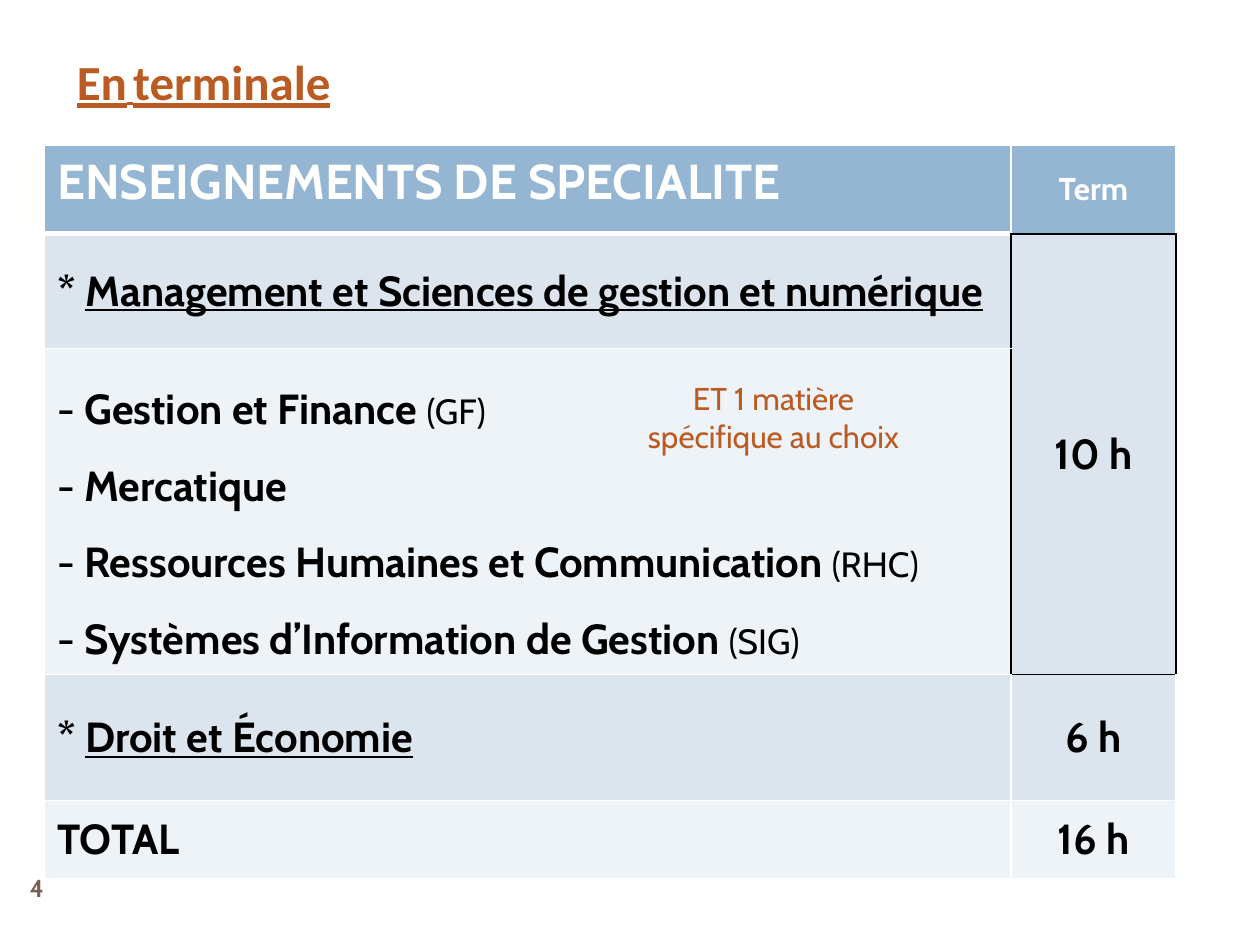
import dataclasses

import pptx
import pptx.dml.color
import pptx.enum.text
import pptx.oxml.ns
import pptx.util
from lxml import etree

Pt = pptx.util.Pt
ALIGN = pptx.enum.text.PP_ALIGN
ANCHOR = pptx.enum.text.MSO_ANCHOR


@dataclasses.dataclass(frozen=True)
class Theme:
    """Colours, fonts and type sizes of the slide."""
    accent: str = "B95B22"
    header: str = "94B6D2"
    band: str = "DCE5EE"
    pale: str = "EEF3F7"
    brown: str = "775F55"
    black: str = "000000"
    white: str = "FFFFFF"
    font: str = "Cabin"
    title_font: str = "Calibri"
    heading: int = 28
    body: int = 24
    small: int = 20
    note: int = 18
    gap: int = 16
    number: int = 14


def rgb(color):
    """Turn a hex string into a colour."""
    return pptx.dml.color.RGBColor.from_string(color)


def add_run(p, text, font=Theme.font, size=Theme.body, color=Theme.black, bold=False, underline=False):
    """Add one formatted run to a paragraph."""
    r = p.add_run()
    r.text = text
    f = r.font
    f.name, f.size, f.bold, f.underline = font, Pt(size), bold, underline
    f.color.rgb = rgb(color)


def sub(parent, tag, **attrs):
    """Add a DrawingML child element."""
    return etree.SubElement(parent, pptx.oxml.ns.qn(tag), **attrs)


class SlideWriter:
    """Holds the theme and the current slide, and adds elements to it."""

    def __init__(self, theme, s):
        """Keep the theme and the slide."""
        self.theme, self.s = theme, s

    def title(self, box, runs):
        """Fill and place the title placeholder."""
        sp = self.s.shapes.title
        sp.left, sp.top, sp.width, sp.height = map(Pt, box)
        tf = sp.text_frame
        tf.vertical_anchor = ANCHOR.TOP
        tf.auto_size = pptx.enum.text.MSO_AUTO_SIZE.NONE
        p = tf.paragraphs[0]
        p.alignment = ALIGN.LEFT
        for text, size in runs:
            add_run(p, text, font=self.theme.title_font, size=size,
                    color=self.theme.accent, bold=True, underline=True)

    def text(self, box, text, anchor=ANCHOR.TOP, **fmt):
        """Add a centred, wrapping text box."""
        tf = self.s.shapes.add_textbox(*map(Pt, box)).text_frame
        tf.word_wrap = True
        tf.vertical_anchor = anchor
        p = tf.paragraphs[0]
        p.alignment = ALIGN.CENTER
        add_run(p, text, **fmt)

    def table(self, box, widths, heights):
        """Add an empty table with given column widths and row heights."""
        tbl = self.s.shapes.add_table(len(heights), len(widths), *map(Pt, box)).table
        for col, width in zip(tbl.columns, widths):
            col.width = Pt(width)
        for row, height in zip(tbl.rows, heights):
            row.height = Pt(height)
        return tbl

    def style_cell(self, cell, fill, **edges):
        """Set borders (white and 1 pt unless given) and fill of a cell."""
        tc_pr = cell._tc.get_or_add_tcPr()
        for side in "LRTB":
            color, width = edges.get(side, (self.theme.white, 1))
            ln = sub(tc_pr, f"a:ln{side}", w=str(Pt(width)))
            sub(sub(ln, "a:solidFill"), "a:srgbClr", val=color)
        cell.fill.solid()
        cell.fill.fore_color.rgb = rgb(fill)

    def cell_text(self, cell, runs, align=ALIGN.LEFT, anchor=ANCHOR.MIDDLE):
        """Write one paragraph of (text, format) runs in a cell."""
        cell.vertical_anchor = anchor
        p = cell.text_frame.paragraphs[0]
        p.alignment = align
        for text, fmt in runs:
            add_run(p, text, **fmt)

    def cell_list(self, cell, items):
        """Write a dashed list of (name, abbreviation) in a cell."""
        cell.vertical_anchor = ANCHOR.MIDDLE
        tf = cell.text_frame
        for i, (name, short) in enumerate(items):
            p = tf.add_paragraph() if i else tf.paragraphs[0]
            p.line_spacing = 1.5
            p_pr = p._p.get_or_add_pPr()
            p_pr.set("marL", "0")
            p_pr.set("indent", "0")
            sub(p_pr, "a:buFont", typeface=self.theme.font)
            sub(p_pr, "a:buChar", char="-")
            add_run(p, f" {name} " if short else f" {name}", bold=True)
            if short:
                add_run(p, short, size=self.theme.small)


def main():
    """Build the slide and save it."""
    t = Theme()
    prs = pptx.Presentation()
    prs.slide_width, prs.slide_height = Pt(720), Pt(540)
    w = SlideWriter(t, prs.slides.add_slide(prs.slide_layouts[5]))
    w.title((36.7, 26, 238, 41), [("En", t.heading), (" ", t.gap), ("terminale", t.heading)])

    tbl = w.table((25.5, 83.2, 646.5, 419), (552.2, 94.3), (50.4, 65.5, 186.5, 72, 44.6))
    dark = (t.black, 1)
    fills = (t.header, t.band, t.pale, t.band, t.pale)
    left_edges = ({"B": (t.white, 3)}, {"R": dark}, {"R": dark}, {}, {})
    boxed = dict.fromkeys("LRTB", dark)
    right_edges = ({"B": dark}, boxed, boxed, {"T": dark}, {})
    for i, fill in enumerate(fills):
        w.style_cell(tbl.cell(i, 0), fill, **left_edges[i])
        w.style_cell(tbl.cell(i, 1), t.band if i == 2 else fill, **right_edges[i])
    tbl.cell(1, 1).merge(tbl.cell(2, 1))

    bold = {"bold": True}
    w.cell_text(tbl.cell(0, 0), [("ENSEIGNEMENTS DE SPECIALITE",
                {"size": t.heading, "color": t.white, "bold": True})], anchor=ANCHOR.TOP)
    w.cell_text(tbl.cell(0, 1), [("Term", {"size": t.note, "color": t.white, "bold": True})],
                align=ALIGN.CENTER)
    for row, subject in ((1, "Management et Sciences de gestion et numérique"), (3, "Droit et Économie")):
        w.cell_text(tbl.cell(row, 0), [("* ", bold), (subject, {"bold": True, "underline": True})])
    w.cell_list(tbl.cell(2, 0), [
        ("Gestion et Finance", "(GF)"),
        ("Mercatique", ""),
        ("Ressources Humaines et Communication", "(RHC)"),
        ("Systèmes d’Information de Gestion", "(SIG)"),
    ])
    w.cell_text(tbl.cell(4, 0), [("TOTAL", bold)])
    for row, hours in ((1, "10 h"), (3, "6 h"), (4, "16 h")):
        w.cell_text(tbl.cell(row, 1), [(hours, bold)], align=ALIGN.CENTER)

    w.text((348.5, 213, 187, 51), "ET 1 matière spécifique au choix", size=t.note, color=t.accent)
    w.text((0, 492, 42, 30), "4", anchor=ANCHOR.MIDDLE, size=t.number, color=t.brown, bold=True)
    prs.save("out.pptx")


if __name__ == "__main__":
    main()
